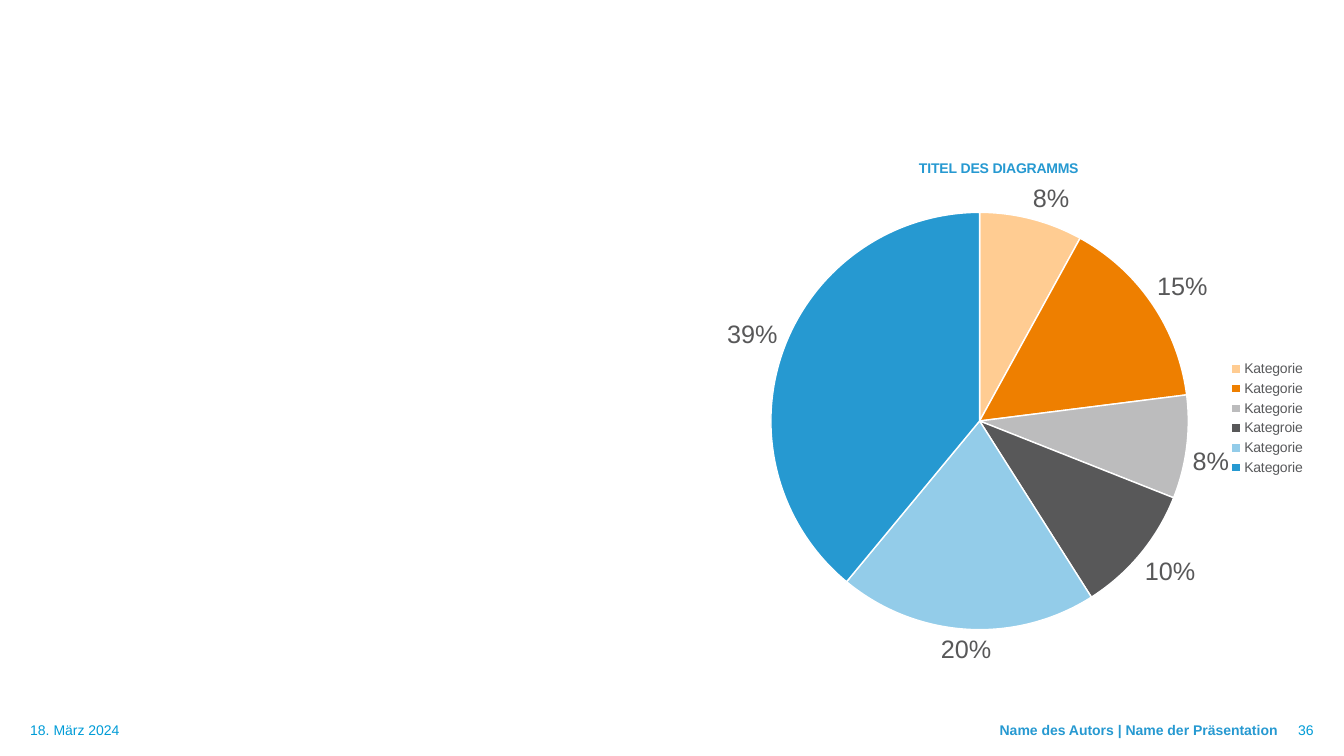
from lxml import etree
from pptx import Presentation
from pptx import util as u
from pptx.chart.data import CategoryChartData
from pptx.dml.color import RGBColor
from pptx.enum import chart as charts, text
from pptx.oxml.ns import qn

WHITE = RGBColor(0xFF, 0xFF, 0xFF)
BLUE = RGBColor(0x26, 0x99, 0xD1)
CYAN = RGBColor(0x00, 0x9C, 0xD7)
GRAY = RGBColor(0x58, 0x58, 0x59)
LEGEND_GRAY = RGBColor(0x58, 0x59, 0x5B)
PALE_ORANGE = RGBColor(0xFF, 0xCC, 0x92)
ORANGE = RGBColor(0xEE, 0x7F, 0x00)
LIGHT_GRAY = RGBColor(0xBC, 0xBC, 0xBD)
LIGHT_BLUE = RGBColor(0x93, 0xCC, 0xE9)

SLICES = [
    ("Kategorie", 0.08, PALE_ORANGE),
    ("Kategorie", 0.15, ORANGE),
    ("Kategorie", 0.08, LIGHT_GRAY),
    ("Kategroie", 0.10, GRAY),
    ("Kategorie", 0.20, LIGHT_BLUE),
    ("Kategorie", 0.39, BLUE),
]


class SlideBuilder:
    font_name = "Arial"
    small = 10
    large = 18

    def __init__(self, page):
        self.page = page

    def style(self, font, size, color, bold=False):
        font.name = self.font_name
        font.size = u.Pt(size)
        font.bold = bold
        font.color.rgb = color

    def footer(self, words, area, color, align=text.PP_ALIGN.LEFT, left=0, right=0, bold=False):
        box = self.page.shapes.add_textbox(*map(u.Inches, area))
        frame = box.text_frame
        frame.word_wrap = True
        frame.vertical_anchor = text.MSO_ANCHOR.BOTTOM
        frame.margin_left, frame.margin_right = u.Inches(left), u.Inches(right)
        frame.margin_top, frame.margin_bottom = 0, u.Inches(0.16)
        para = frame.paragraphs[0]
        para.text = words
        para.alignment = align
        self.style(para.font, self.small, color, bold)

    def pie(self, title, slices, area, plot_area):
        data = CategoryChartData(number_format="0%")
        data.categories = [name for name, value, color in slices]
        data.add_series("Series 1", [value for name, value, color in slices])
        frame = self.page.shapes.add_chart(
            charts.XL_CHART_TYPE.PIE, *map(u.Inches, area), data)
        chart = frame.chart
        self.style(chart.font, self.small, GRAY)

        chart.has_title = True
        heading = chart.chart_title.text_frame
        heading.text = title
        self.style(heading.paragraphs[0].font, self.small, BLUE, bold=True)
        chart.chart_title.include_in_layout = False

        chart.has_legend = True
        chart.legend.position = charts.XL_LEGEND_POSITION.RIGHT
        chart.legend.include_in_layout = False
        self.style(chart.legend.font, self.small, LEGEND_GRAY)

        plot = chart.plots[0]
        plot.vary_by_categories = True
        series = plot.series[0]
        for index, (name, value, color) in enumerate(slices):
            point = series.points[index].format
            point.fill.solid()
            point.fill.fore_color.rgb = color
            point.line.color.rgb = WHITE
            point.line.width = u.Pt(1)

        plot.has_data_labels = True
        labels = plot.data_labels
        labels.show_value = True
        labels.show_percentage = False
        labels.number_format = "0%"
        labels.number_format_is_linked = False
        labels.position = charts.XL_LABEL_POSITION.OUTSIDE_END
        self.style(labels.font, self.large, GRAY)
        self.place_plot(chart, plot_area)

    def place_plot(self, chart, plot_area):
        region = chart.element.find(".//" + qn("c:plotArea"))
        for old in region.findall(qn("c:layout")):
            region.remove(old)
        layout = etree.Element(qn("c:layout"))
        manual = etree.SubElement(layout, qn("c:manualLayout"))
        settings = [("layoutTarget", "inner"), ("xMode", "edge"), ("yMode", "edge")]
        settings += zip("xywh", plot_area)
        for tag, value in settings:
            etree.SubElement(manual, qn("c:" + tag)).set("val", str(value))
        region.insert(0, layout)


def main():
    deck = Presentation()
    deck.slide_width, deck.slide_height = u.Inches(13.33), u.Inches(7.5)
    builder = SlideBuilder(deck.slides.add_slide(deck.slide_layouts[6]))
    right = text.PP_ALIGN.RIGHT
    builder.footer("18. März 2024", (0, 7.17, 4.08, 0.31), CYAN, left=0.3)
    builder.footer("36", (12.67, 7.16, 0.66, 0.33), CYAN, right, right=0.3)
    builder.footer("Name des Autors | Name der Präsentation",
                   (8.17, 7.17, 4.5, 0.31), BLUE, right, bold=True)
    builder.pie("TITEL DES DIAGRAMMS", SLICES,
                (6.76, 1.39, 6.29, 5.52), (0.14, 0.13, 0.66, 0.75))
    deck.save("out.pptx")


if __name__ == "__main__":
    main()
